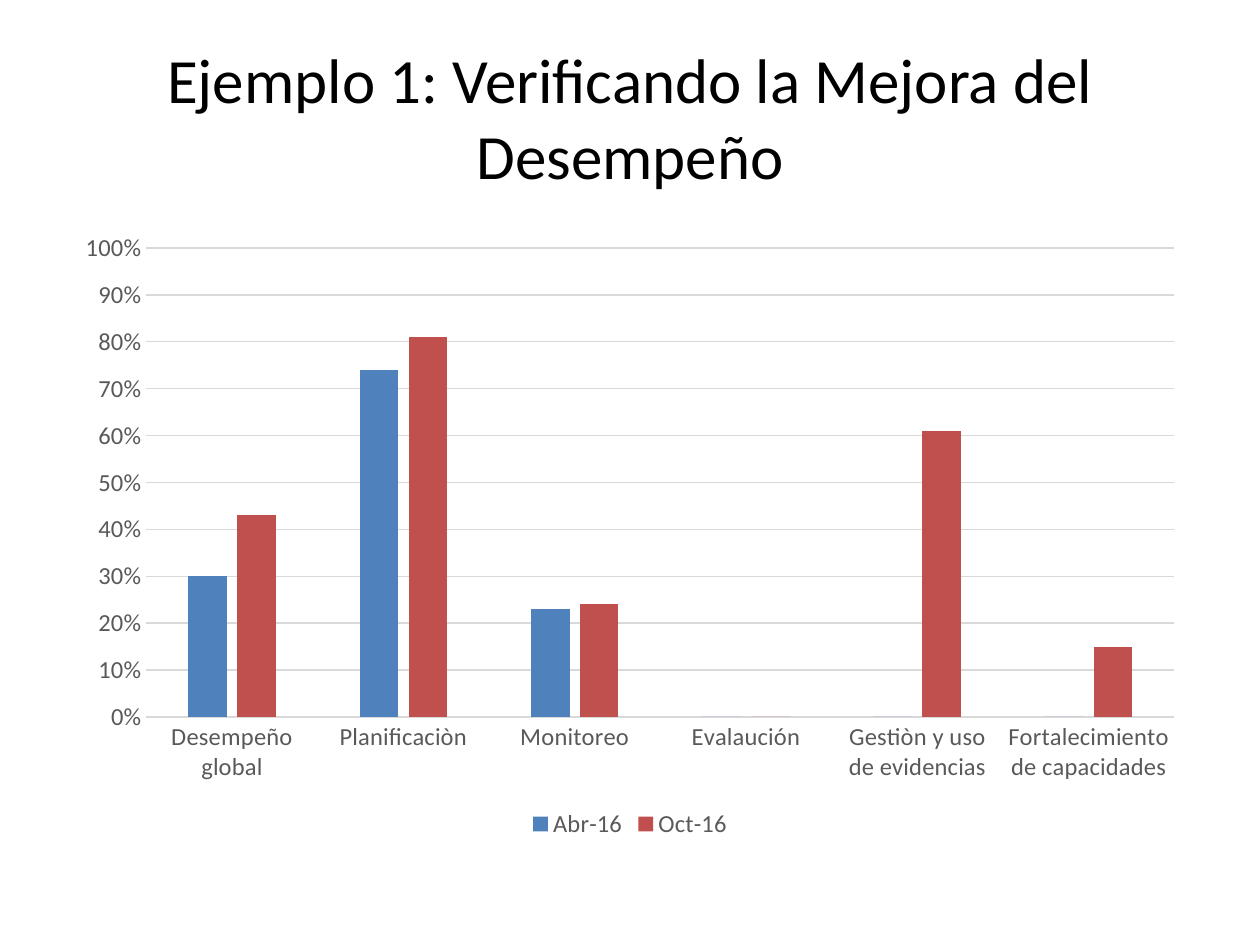
from dataclasses import dataclass

import pptx
import pptx.chart.data
import pptx.dml.color
import pptx.enum.chart
import pptx.enum.text
import pptx.util

Pt = pptx.util.Pt
Color = pptx.dml.color.RGBColor.from_string


@dataclass(frozen=True)
class Theme:
    font: str = "Calibri"
    title_size: int = 36
    label_size: int = 14
    line_width: float = 0.75
    title: str = "000000"
    label: str = "595959"
    grid: str = "D9D9D9"
    april: str = "4F81BD"
    october: str = "C0504D"


THEME = Theme()
CATEGORIES = [
    "Desempeño global",
    "Planificaciòn",
    "Monitoreo",
    "Evalaución",
    "Gestiòn y uso de evidencias",
    "Fortalecimiento de capacidades",
]
SERIES = [
    ("Abr-16", [0.3, 0.74, 0.23, 0, 0, 0], THEME.april),
    ("Oct-16", [0.43, 0.81, 0.24, 0, 0.61, 0.15], THEME.october),
]


def style_font(font, size, color):
    font.name = THEME.font
    font.size = Pt(size)
    font.bold = False
    font.color.rgb = Color(color)


def style_line(line):
    line.color.rgb = Color(THEME.grid)
    line.width = Pt(THEME.line_width)


def add_title(page, box, text):
    frame = page.shapes.add_textbox(*map(Pt, box)).text_frame
    frame.word_wrap = True
    frame.vertical_anchor = pptx.enum.text.MSO_ANCHOR.MIDDLE
    frame.text = text
    para = frame.paragraphs[0]
    para.alignment = pptx.enum.text.PP_ALIGN.CENTER
    style_font(para.runs[0].font, THEME.title_size, THEME.title)


def add_performance_chart(page, box):
    data = pptx.chart.data.CategoryChartData(number_format="0%")
    data.categories = CATEGORIES
    for name, values, color in SERIES:
        data.add_series(name, values)
    chart = page.shapes.add_chart(
        pptx.enum.chart.XL_CHART_TYPE.COLUMN_CLUSTERED, *map(Pt, box), data
    ).chart
    chart.has_title = False
    style_font(chart.font, THEME.label_size, THEME.label)

    plot = chart.plots[0]
    plot.gap_width = 219
    plot.overlap = -27
    plot.vary_by_categories = False
    for series, (name, values, color) in zip(plot.series, SERIES):
        series.invert_if_negative = False
        series.format.fill.solid()
        series.format.fill.fore_color.rgb = Color(color)

    for axis in (chart.category_axis, chart.value_axis):
        axis.major_tick_mark = pptx.enum.chart.XL_TICK_MARK.NONE
        axis.minor_tick_mark = pptx.enum.chart.XL_TICK_MARK.NONE
        style_font(axis.tick_labels.font, THEME.label_size, THEME.label)
    style_line(chart.category_axis.format.line)

    scale = chart.value_axis
    scale.minimum_scale = 0
    scale.maximum_scale = 1
    scale.major_unit = 0.1
    scale.tick_labels.number_format = "0%"
    scale.tick_labels.number_format_is_linked = False
    scale.format.line.fill.background()
    scale.has_major_gridlines = True
    style_line(scale.major_gridlines.format.line)

    chart.has_legend = True
    chart.legend.position = pptx.enum.chart.XL_LEGEND_POSITION.BOTTOM
    chart.legend.include_in_layout = False
    style_font(chart.legend.font, THEME.label_size, THEME.label)


def main():
    deck = pptx.Presentation()
    deck.slide_width = Pt(720)
    deck.slide_height = Pt(540)
    page = deck.slides.add_slide(deck.slide_layouts[6])
    add_title(page, (36, 21.6, 648, 90), "Ejemplo 1: Verificando la Mejora del Desempeño")
    add_performance_chart(page, (36, 126, 648, 356.4))
    deck.save("out.pptx")


if __name__ == "__main__":
    main()
